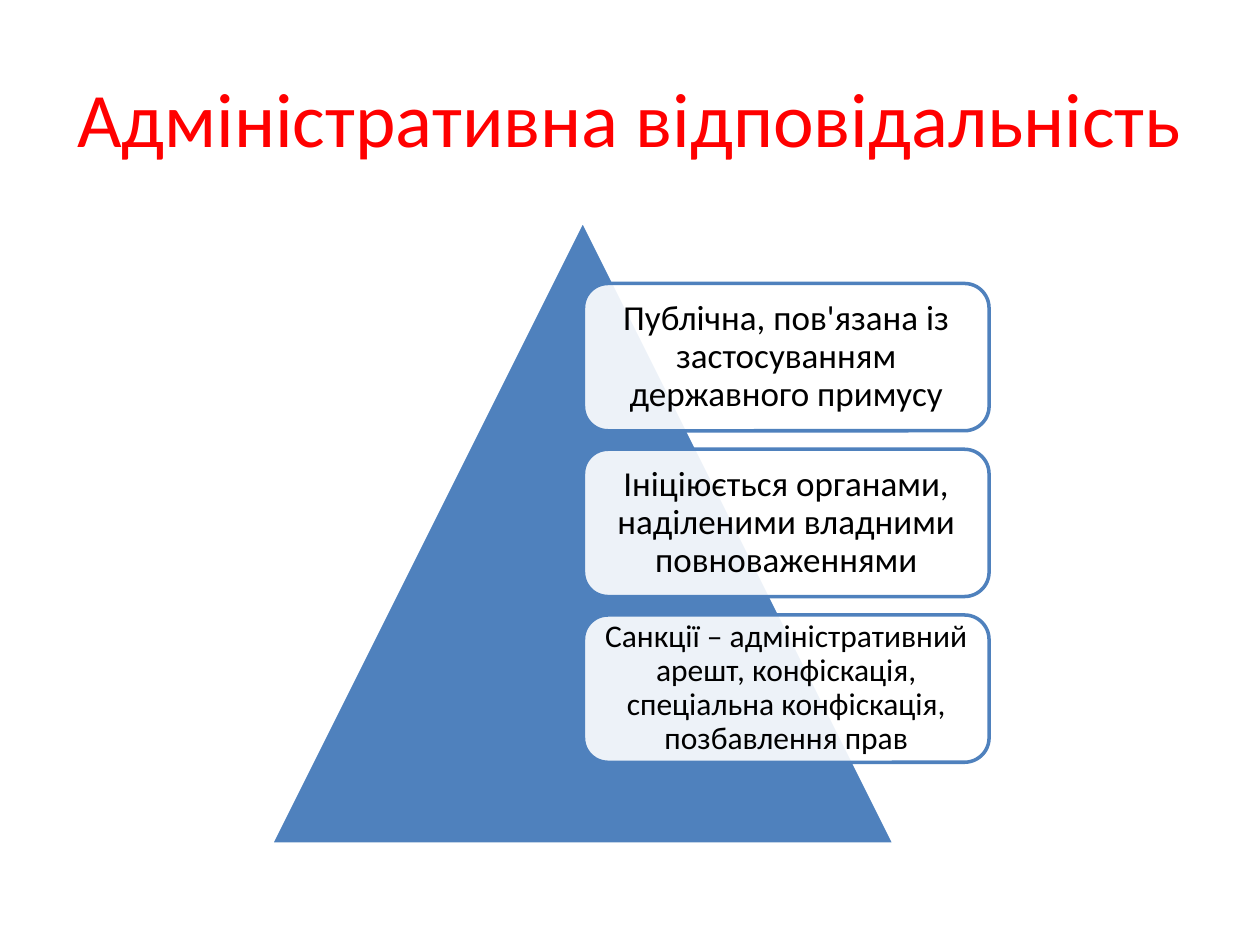
from dataclasses import dataclass

from lxml.etree import SubElement
from pptx import Presentation
from pptx.dml.color import RGBColor
from pptx.enum.shapes import MSO_SHAPE
from pptx.enum.text import MSO_ANCHOR, PP_ALIGN
from pptx.oxml.ns import qn
from pptx.shapes.autoshape import Shape
from pptx.slide import Slide
from pptx.util import Pt

RED = RGBColor(0xFF, 0x00, 0x00)
BLUE = RGBColor(0x4F, 0x81, 0xBD)
WHITE = RGBColor(0xFF, 0xFF, 0xFF)
BLACK = RGBColor(0x00, 0x00, 0x00)
FONT = "Calibri"

CARD_LEFT, CARD_TOP = 333.4, 162
CARD_WIDTH, CARD_HEIGHT = 231.8, 84.2
CARD_PITCH = CARD_HEIGHT * 9 / 8  # the gap is an eighth of the card height


@dataclass(frozen=True)
class Card:
    text: str
    size: float = 20
    margin: float = 6


CARDS = (
    Card("Публічна, пов'язана із застосуванням державного примусу"),
    Card("Ініціюється органами, наділеними владними повноваженнями"),
    Card(
        "Санкції – адміністративний арешт, конфіскація, "
        "спеціальна конфіскація, позбавлення прав",
        size=18,
        margin=5.4,
    ),
)


def write_text(
    box: Shape,
    text: str,
    *,
    size: float,
    color: RGBColor,
    margins: tuple[float, float] = (7.2, 3.6),
    line_spacing: float = 1.0,
) -> None:
    """Write one centred paragraph; margins are horizontal and vertical."""
    frame = box.text_frame
    frame.word_wrap = True
    frame.vertical_anchor = MSO_ANCHOR.MIDDLE
    frame.margin_left = frame.margin_right = Pt(margins[0])
    frame.margin_top = frame.margin_bottom = Pt(margins[1])
    para = frame.paragraphs[0]
    para.alignment = PP_ALIGN.CENTER
    para.line_spacing = line_spacing
    span = para.add_run()
    span.text = text
    span.font.name = FONT
    span.font.size = Pt(size)
    span.font.color.rgb = color


def add_figure(
    page: Slide,
    kind: MSO_SHAPE,
    bounds: tuple[float, float, float, float],
    *,
    fill: RGBColor,
    line: RGBColor,
    opacity: int = 100,
) -> Shape:
    """Add a filled, outlined preset shape; opacity is a percentage."""
    figure = page.shapes.add_shape(kind, *(Pt(length) for length in bounds))
    figure.shadow.inherit = False
    figure.fill.solid()
    figure.fill.fore_color.rgb = fill
    figure.line.color.rgb = line
    figure.line.width = Pt(2)
    if opacity < 100:
        color = figure.fill._xPr.find(qn("a:solidFill"))[0]
        SubElement(color, qn("a:alpha"), val=str(opacity * 1000))
    return figure


def add_card(page: Slide, card: Card, top: float) -> None:
    box = add_figure(
        page,
        MSO_SHAPE.ROUNDED_RECTANGLE,
        (CARD_LEFT, top, CARD_WIDTH, CARD_HEIGHT),
        fill=WHITE,
        line=BLUE,
        opacity=90,
    )
    write_text(
        box,
        card.text,
        size=card.size,
        color=BLACK,
        margins=(card.margin, card.margin),
        line_spacing=0.9,
    )


def main() -> None:
    deck = Presentation()
    deck.slide_width, deck.slide_height = Pt(720), Pt(540)
    page = deck.slides.add_slide(deck.slide_layouts[6])

    # Title
    title = page.shapes.add_textbox(Pt(36), Pt(21.6), Pt(648), Pt(90))
    write_text(title, "Адміністративна відповідальність", size=44, color=RED)

    # Pyramid
    add_figure(
        page,
        MSO_SHAPE.ISOSCELES_TRIANGLE,
        (154.8, 126, 356.4, 356.4),
        fill=BLUE,
        line=WHITE,
    )

    # Cards over the pyramid
    for index, card in enumerate(CARDS):
        add_card(page, card, CARD_TOP + index * CARD_PITCH)

    deck.save("out.pptx")


if __name__ == "__main__":
    main()
